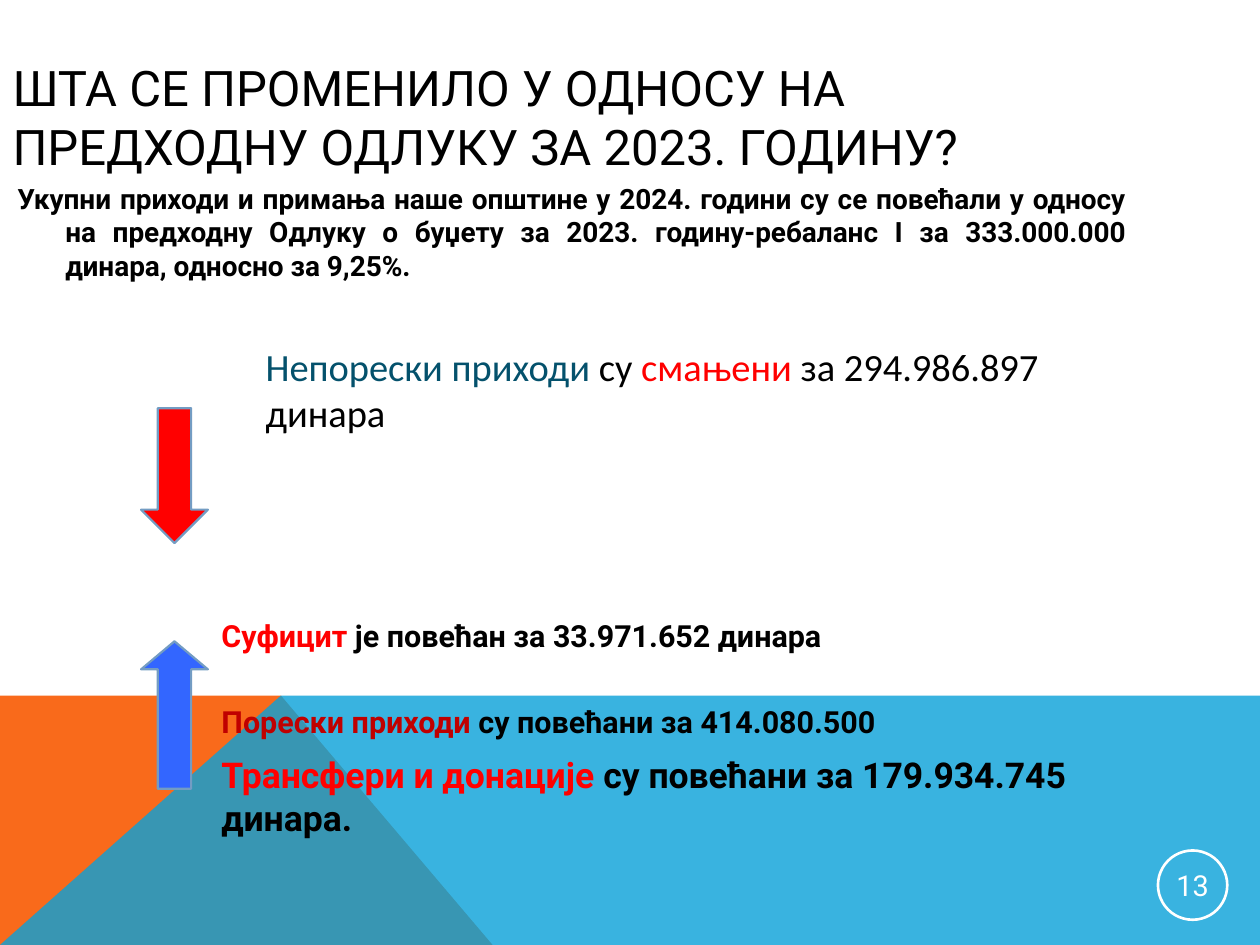
from lxml.etree import SubElement
from pptx import Presentation
from pptx.dml.color import RGBColor
from pptx.enum.shapes import MSO_SHAPE as Shape
from pptx.enum.text import MSO_ANCHOR as Anchor, MSO_AUTO_SIZE as AutoSize, PP_ALIGN as Align
from pptx.oxml.ns import qn
from pptx.util import Inches, Pt

BLACK = RGBColor(0x00, 0x00, 0x00)
WHITE = RGBColor(0xFF, 0xFF, 0xFF)
RED = RGBColor(0xFF, 0x00, 0x00)
DARK_RED = RGBColor(0xC0, 0x00, 0x00)
TEAL = RGBColor(0x04, 0x51, 0x6C)
ORANGE = RGBColor(0xF9, 0x6A, 0x1B)
SKY = RGBColor(0x08, 0xA1, 0xD9)
BLUE = RGBColor(0x33, 0x66, 0xFF)
OUTLINE = RGBColor(0x73, 0x9C, 0xC3)

W, H = 10, 7.5
BAND_TOP, PEAK = 5.52, 2.23
ARROW_LEFT, ARROW_W = 1.12, 0.53

prs = Presentation()
prs.slide_width, prs.slide_height = Inches(W), Inches(H)
s = prs.slides.add_slide(prs.slide_layouts[5])


def write(p, runs, size, font="Roboto", bold=False, **layout):
    for name, value in layout.items():
        setattr(p, name, value)
    for text, color in runs:
        r = p.add_run()
        r.text = text
        for name, value in dict(name=font, size=Pt(size), bold=bold).items():
            setattr(r.font, name, value)
        r.font.color.rgb = color


def text_box(left, top, width, height, **frame):
    tf = s.shapes.add_textbox(*map(Inches, (left, top, width, height))).text_frame
    tf.word_wrap = True
    for name, value in frame.items():
        setattr(tf, name, value)
    return tf


# Bottom band: orange wedge under a translucent blue field
bands = [
    (ORANGE, 100, [(0, H), (0, BAND_TOP), (PEAK, BAND_TOP), (3.91, H)]),
    (SKY, 80, [(0, H), (PEAK, BAND_TOP), (W, BAND_TOP), (W, H)]),
]
for color, opacity, points in bands:
    start, *rest = [(Inches(x), Inches(y)) for x, y in points]
    builder = s.shapes.build_freeform(*start)
    builder.add_line_segments(rest, close=True)
    sp = builder.convert_to_shape()
    sp.shadow.inherit = False
    sp.line.fill.background()
    sp.fill.solid()
    sp.fill.fore_color.rgb = color
    if opacity < 100:
        rgb = sp.fill._xPr.find(qn("a:solidFill"))[0]
        SubElement(rgb, qn("a:alpha")).set("val", str(opacity * 1000))

# Page number
sp = s.shapes.add_shape(Shape.OVAL, *map(Inches, (9.19, 6.75, 0.55, 0.55)))
sp.shadow.inherit = False
sp.fill.background()
sp.line.color.rgb, sp.line.width = WHITE, Pt(1.5)
tf = sp.text_frame
for side in ("left", "top", "right", "bottom"):
    setattr(tf, f"margin_{side}", Inches(0.01))
tf.vertical_anchor = Anchor.MIDDLE
write(tf.paragraphs[0], [("13", WHITE)], 16.5, alignment=Align.CENTER)

# Title
title = s.shapes.title
title.left, title.top, title.width, title.height = map(Inches, (0, 0.3, 8.73, 1.25))
tf = title.text_frame
tf.auto_size, tf.vertical_anchor = AutoSize.NONE, Anchor.MIDDLE
write(tf.paragraphs[0],
      [("ШТА СЕ ПРОМЕНИЛО У ОДНОСУ НА ПРЕДХОДНУ ОДЛУКУ ЗА 2023. ГОДИНУ?", BLACK)],
      28, alignment=Align.LEFT)

# Summary with a hanging indent
p = text_box(0.04, 1.39, 9, 1.24).paragraphs[0]
write(p, [("Укупни приходи и примања наше општине у 2024. години су се повећали у односу "
           "на предходну Одлуку о буџету за 2023. годину-ребаланс I за 333.000.000 динара, "
           "односно за 9,25%.", BLACK)], 16, bold=True, alignment=Align.JUSTIFY)
pPr = p._p.get_or_add_pPr()
pPr.set("marL", str(Inches(0.38)))
pPr.set("indent", str(Inches(-0.38)))

# Increases
tf = text_box(1.66, 4.85, 8, 1.94, margin_right=Inches(0.2))
increases = [
    ("Суфицит", " је повећан за 33.971.652 динара", RED, 17.4, 0),
    ("Порески приходи ", "су повећани за 414.080.500", DARK_RED, 17.4, 28),
    ("Трансфери и донације ", "су повећани за 179.934.745 динара.", RED, 20.3, 8),
]
for i, (item, change, color, size, gap) in enumerate(increases):
    p = tf.add_paragraph() if i else tf.paragraphs[0]
    write(p, [(item, color), (change, BLACK)], size, bold=True, space_before=Pt(gap))

# Decrease
tf = text_box(2.01, 2.33, 6.69, 1.18, margin_top=Inches(0.39))
write(tf.paragraphs[0],
      [("Непорески приходи ", TEAL), ("су", BLACK), (" смањени ", RED),
       ("за 294.986.897 динара", BLACK)], 22, font="Calibri")

# Direction arrows
arrows = [
    (Shape.DOWN_ARROW, 3.24, 1.07, 0.5, RED),
    (Shape.UP_ARROW, 5.09, 1.17, 0.42, BLUE),
]
for kind, top, height, head, color in arrows:
    sp = s.shapes.add_shape(kind, *map(Inches, (ARROW_LEFT, top, ARROW_W, height)))
    sp.shadow.inherit = False
    sp.adjustments[0], sp.adjustments[1] = 0.5, head
    sp.fill.solid()
    sp.fill.fore_color.rgb = color
    sp.line.color.rgb, sp.line.width = OUTLINE, Pt(1.25)

prs.save("out.pptx")
